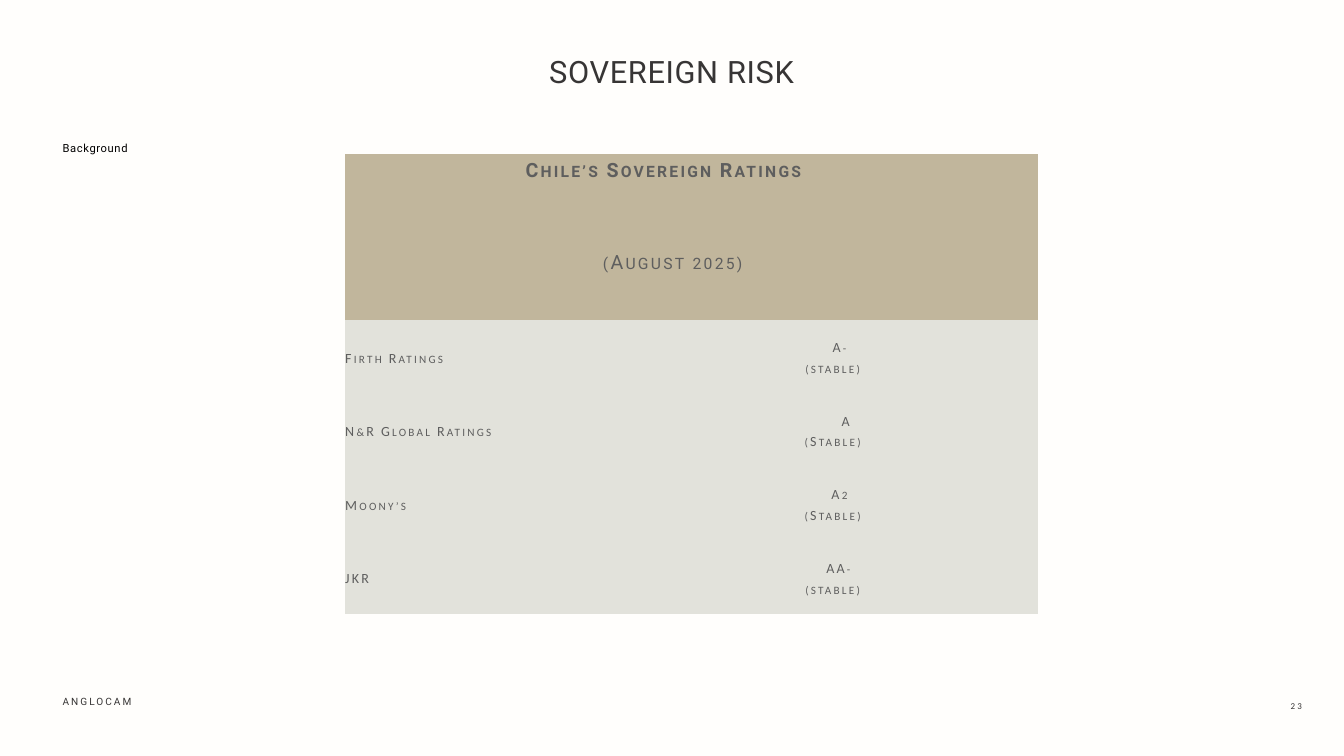
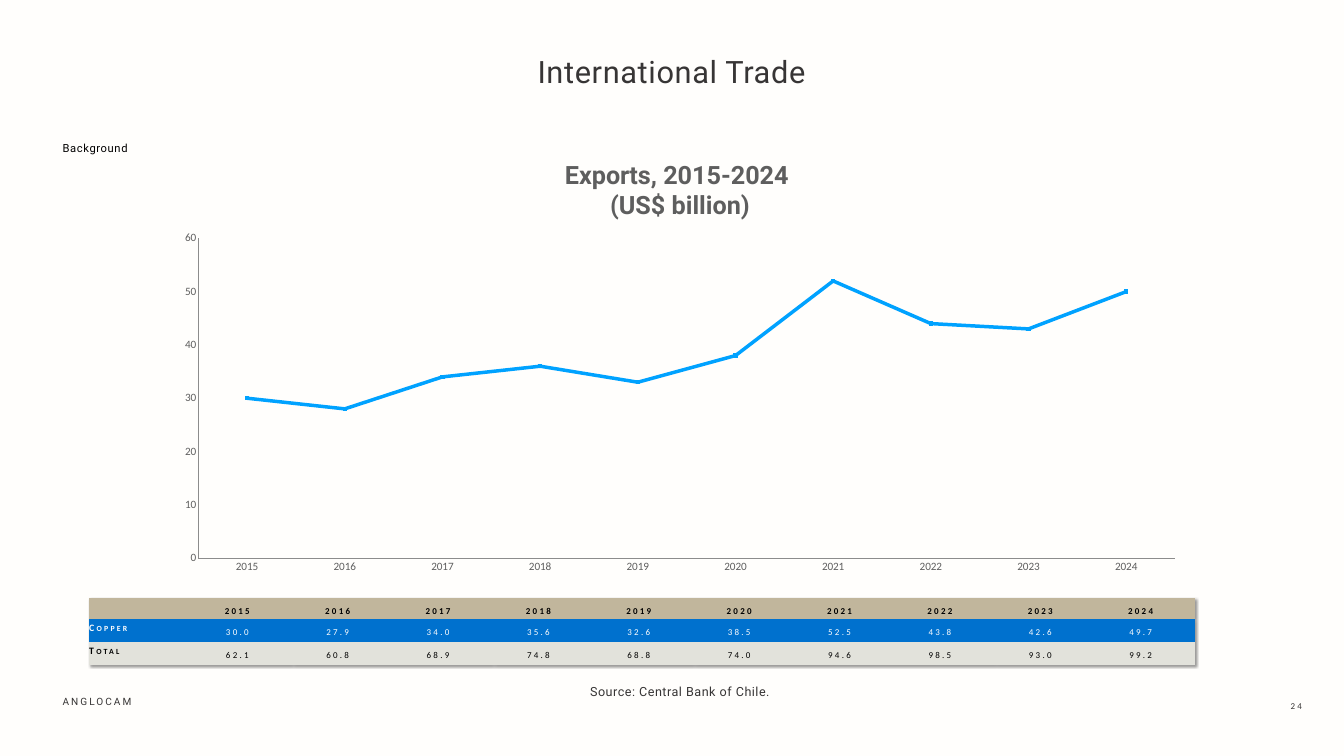
from lxml import etree
from pptx import Presentation
from pptx.chart.data import CategoryChartData
from pptx.dml.color import RGBColor
from pptx.enum.chart import XL_CHART_TYPE, XL_MARKER_STYLE, XL_TICK_MARK
from pptx.enum.text import MSO_ANCHOR, PP_ALIGN
from pptx.oxml import parse_xml
from pptx.oxml.ns import nsdecls, qn
from pptx.util import Emu, Inches, Pt

LEFT, CENTER = PP_ALIGN.LEFT, PP_ALIGN.CENTER
TOP, MIDDLE, BOTTOM = MSO_ANCHOR.TOP, MSO_ANCHOR.MIDDLE, MSO_ANCHOR.BOTTOM
LINE_MARKERS = XL_CHART_TYPE.LINE_MARKERS
SQUARE = XL_MARKER_STYLE.SQUARE
NO_TICK = XL_TICK_MARK.NONE

W, H = Inches(26.67), Inches(15)
HEAD, BODY = "Roboto", "Calibri"
COLORS = {
    "paper": "FFFEFC", "ink": "373535", "grey": "5E5E5E", "black": "000000",
    "white": "FFFFFF", "sand": "C1B69C", "stone": "E2E2DB", "blue": "0071CE",
    "line": "00A2FF", "axis": "8C8C8C",
}
PLAIN_TABLE = "{2D5ABB26-0587-4C30-8999-92F81FD0307C}"

RATINGS = [
    ("Firth Ratings", "A-", "(stable)"),
    ("N&R Global Ratings", "A", "(Stable)"),
    ("Moony’s", "A2", "(Stable)"),
    ("JKR", "AA-", "(stable)"),
]
YEARS = [str(year) for year in range(2015, 2025)]
COPPER = [30.0, 27.9, 34.0, 35.6, 32.6, 38.5, 52.5, 43.8, 42.6, 49.7]
TOTAL = [62.1, 60.8, 68.9, 74.8, 68.8, 74.0, 94.6, 98.5, 93.0, 99.2]


def rgb(name):
    return RGBColor.from_string(COLORS[name])


def share(x, y, w, h):
    return [Emu(int(v * side / 100)) for v, side in zip((x, y, w, h), (W, H, W, H))]


def style_font(font, size, face, color, bold=False):
    font.size, font.name, font.bold = Pt(size), face, bold
    font.color.rgb = rgb(color)


def write(tf, lines, size, face, color, align=LEFT, spacing=0, bold=False, small=False):
    for i, line in enumerate(lines):
        p = tf.paragraphs[0] if i == 0 else tf.add_paragraph()
        p.text = line
        p.alignment, p.line_spacing = align, 1.2
        for r in p.runs:
            style_font(r.font, size, face, color, bold)
            rPr = r._r.get_or_add_rPr()
            rPr.set("spc", str(int(spacing * 100)))
            if small:
                rPr.set("cap", "small")


def add_text(s, box, text, size, color="ink", face=HEAD, anchor=TOP, **look):
    tf = s.shapes.add_textbox(*box).text_frame
    tf.word_wrap = True
    tf.margin_left = tf.margin_right = tf.margin_top = tf.margin_bottom = 0
    tf.vertical_anchor = anchor
    write(tf, [text], size, face, color, **look)


def fill_cell(cell, lines, size, fill, color, face=BODY, anchor=MIDDLE, **look):
    cell.fill.solid()
    cell.fill.fore_color.rgb = rgb(fill)
    cell.margin_left = cell.margin_right = cell.margin_top = Inches(0.01)
    cell.margin_bottom = 0
    cell.vertical_anchor = anchor
    write(cell.text_frame, lines, size, face, color, spacing=3.2, small=True, **look)


def add_grid(s, box, cols, rows):
    x, y, w, h = box
    tbl = s.shapes.add_table(len(rows), len(cols), x, y, w, h).table
    tbl.first_row = tbl.horz_banding = False
    tbl._tbl.tblPr.find(qn("a:tableStyleId")).text = PLAIN_TABLE
    for col, part in zip(tbl.columns, cols):
        col.width = int(w * part / sum(cols))
    for row, part in zip(tbl.rows, rows):
        row.height = int(h * part / sum(rows))
    return tbl


def new_slide(prs, title, number):
    s = prs.slides.add_slide(prs.slide_layouts[6])
    s.background.fill.solid()
    s.background.fill.fore_color.rgb = rgb("paper")
    add_text(s, share(4.66, 91.47, 17.25, 1.87), "anglocam", 18, anchor=MIDDLE,
             spacing=2.9, small=True)
    add_text(s, share(96.03, 92, 3.71, 1.93), str(number), 16, face=BODY,
             spacing=3.2, small=True)
    add_text(s, share(30.11, 5.95, 39.75, 5.6), title, 44, align=CENTER, spacing=0.9)
    add_text(s, share(4.66, 18.4, 17.25, 2.07), "Background", 16, "black",
             anchor=MIDDLE, spacing=0.9)
    return s


def add_ratings(s, box):
    tbl = add_grid(s, box, [5.96, 7.79], [1.82] + [1.46] * 5)
    headings = [("Chile’s Sovereign Ratings", True), ("(August 2025) ", False)]
    for i, (text, bold) in enumerate(headings):
        cell = tbl.cell(i, 0)
        cell.merge(tbl.cell(i, 1))
        fill_cell(cell, [text], 28, "sand", "grey", HEAD, TOP, align=CENTER, bold=bold)
    for i, (agency, grade, outlook) in enumerate(RATINGS, len(headings)):
        fill_cell(tbl.cell(i, 0), [agency], 20, "stone", "grey")
        fill_cell(tbl.cell(i, 1), [grade, outlook], 20, "stone", "grey", align=CENTER)


def add_exports_table(s, box):
    tbl = add_grid(s, box, [2.04] + [1.99] * len(YEARS), [0.41, 0.46, 0.45])
    rows = [
        ("", YEARS, "sand", "black", True),
        ("Copper", COPPER, "blue", "white", False),
        ("Total", TOTAL, "stone", "black", False),
    ]
    for i, (label, values, fill, color, bold) in enumerate(rows):
        fill_cell(tbl.cell(i, 0), [label], 14, fill, color, anchor=TOP, bold=True)
        for j, value in enumerate(values, 1):
            fill_cell(tbl.cell(i, j), [str(value)], 16, fill, color,
                      align=CENTER, bold=bold)
    tbl._tbl.tblPr.insert(0, parse_xml(
        f'<a:effectLst {nsdecls("a")}><a:outerShdw blurRad="38100" dist="38100" '
        'dir="2700000" algn="tl" rotWithShape="0"><a:srgbClr val="000000">'
        '<a:alpha val="40000"/></a:srgbClr></a:outerShdw></a:effectLst>'))


def set_plot_area(chart, x, y, w, h):
    area = chart._chartSpace.chart.plotArea
    for old in area.findall(qn("c:layout")):
        area.remove(old)
    layout = etree.Element(qn("c:layout"))
    manual = etree.SubElement(layout, qn("c:manualLayout"))
    parts = [("layoutTarget", "inner"), ("xMode", "edge"), ("yMode", "edge"),
             ("x", x / 100), ("y", y / 100), ("w", w / 100), ("h", h / 100)]
    for tag, value in parts:
        etree.SubElement(manual, qn("c:" + tag)).set("val", str(value))
    area.insert(0, layout)


def add_exports_chart(s, box):
    data = CategoryChartData()
    data.categories = YEARS
    data.add_series("Series 1", [round(value) for value in COPPER])
    chart = s.shapes.add_chart(LINE_MARKERS, *box, data).chart
    style_font(chart.font, 16, BODY, "grey")
    chart.has_legend = False
    chart.has_title = True
    p = chart.chart_title.text_frame.paragraphs[0]
    p.text = "Exports, 2015-2024 \v(US$ billion)"
    for r in p.runs:
        style_font(r.font, 36, HEAD, "grey", True)
    chart.chart_title.include_in_layout = False
    for axis in (chart.category_axis, chart.value_axis):
        axis.major_tick_mark = axis.minor_tick_mark = NO_TICK
        axis.has_major_gridlines = False
        axis.format.line.color.rgb = rgb("axis")
        axis.format.line.width = Pt(1)
    axis = chart.value_axis
    axis.minimum_scale, axis.maximum_scale, axis.major_unit = 0, 60, 10
    axis.tick_labels.number_format = "0"
    axis.tick_labels.number_format_is_linked = False
    plot = chart.plots[0]
    plot.vary_by_categories = False
    series = plot.series[0]
    series.smooth = False
    series.format.line.color.rgb = rgb("line")
    series.format.line.width = Pt(5)
    series.marker.style, series.marker.size = SQUARE, 5
    series.marker.format.fill.solid()
    series.marker.format.fill.fore_color.rgb = rgb("line")
    series.marker.format.line.color.rgb = rgb("line")
    set_plot_area(chart, 3.3, 21, 94.7, 73.3)


def sovereign_risk(prs):
    s = new_slide(prs, "SOVEREIGN RISK", 23)
    add_ratings(s, share(25.65, 20.4, 51.59, 60.8))


def international_trade(prs):
    s = new_slide(prs, "International Trade", 24)
    add_text(s, share(36.03, 90.13, 29.13, 2.27), "Source: Central Bank of Chile.", 18,
             anchor=BOTTOM, align=CENTER, spacing=0.7)
    add_exports_table(s, share(6.6, 79.13, 82.34, 8.8))
    add_exports_chart(s, share(12.22, 19.4, 76.75, 57.73))


def main():
    prs = Presentation()
    prs.slide_width, prs.slide_height = W, H
    sovereign_risk(prs)
    international_trade(prs)
    prs.save("out.pptx")


if __name__ == "__main__":
    main()
